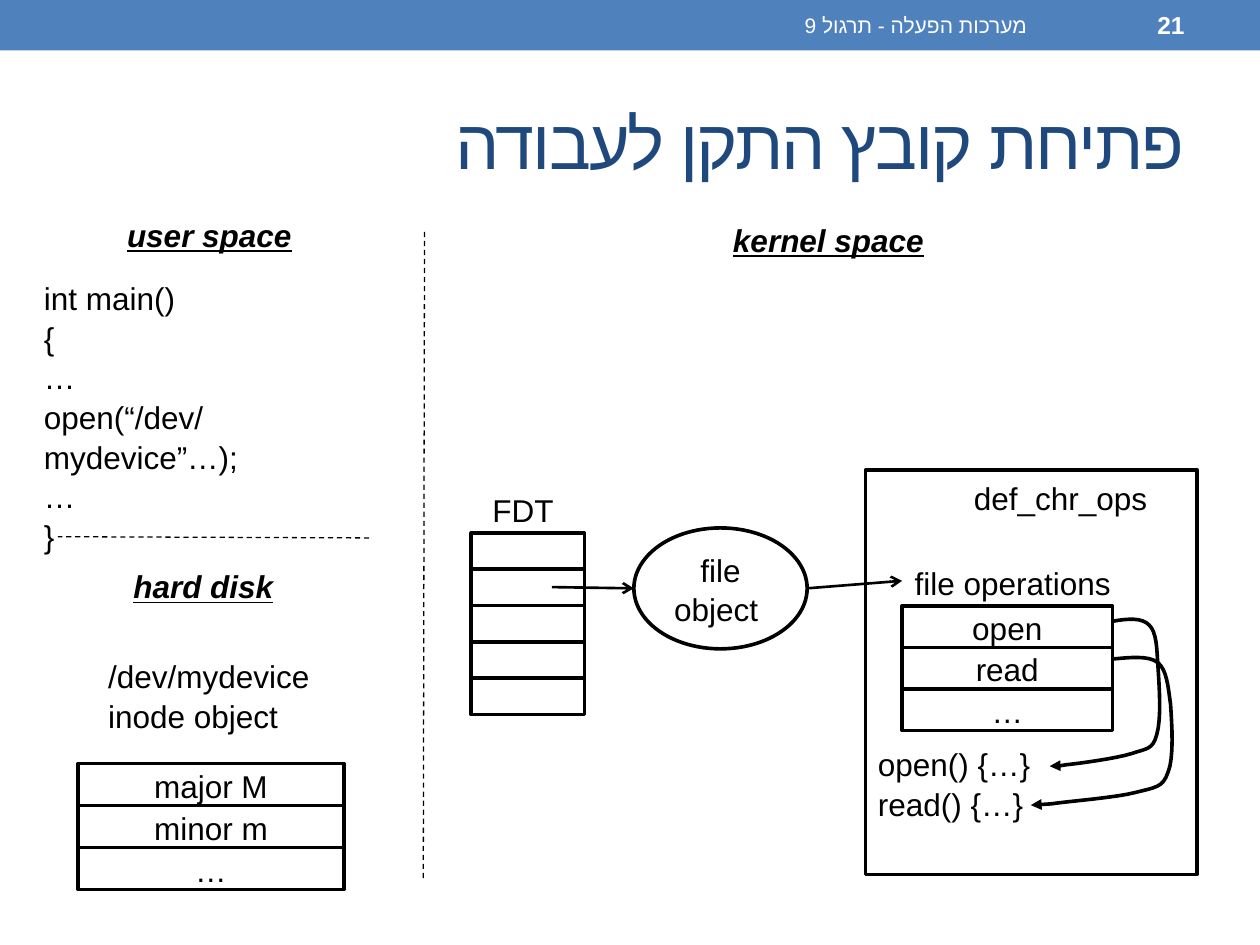
from lxml.etree import SubElement
from pptx import Presentation
from pptx.dml.color import RGBColor
from pptx.enum.dml import MSO_LINE
from pptx.enum.shapes import MSO_CONNECTOR, MSO_SHAPE
from pptx.enum.text import MSO_ANCHOR, PP_ALIGN
from pptx.oxml.ns import qn
from pptx.util import Pt

BLACK, WHITE, BLUE, NAVY = "000000", "FFFFFF", "4F81BD", "1F497D"
color = RGBColor.from_string


def write(shape, text, size=18, ink=BLACK, align=PP_ALIGN.LEFT, heading=False,
          rtl=False, wrap=True, anchor=MSO_ANCHOR.TOP):
    frame = shape.text_frame
    frame.text = text
    frame.word_wrap = wrap
    frame.vertical_anchor = anchor
    for paragraph in frame.paragraphs:
        paragraph.alignment = align
        paragraph.line_spacing = 1 if rtl else 1.05
        font = paragraph.font
        font.name, font.size = "Arial", Pt(size)
        font.color.rgb = color(ink)
        if heading:
            font.bold = font.italic = font.underline = True
        if rtl:
            paragraph._p.get_or_add_pPr().set("rtl", "1")
            for run in paragraph.runs:
                SubElement(run._r.get_or_add_rPr(), qn("a:cs"), typeface="Arial")


def outline(shape, width, dash=None, arrow=None):
    """Give a shape or connector a black line, an optional end arrow and no shadow."""
    shape.line.color.rgb = color(BLACK)
    shape.line.width = Pt(width)
    if dash:
        shape.line.dash_style = dash
    properties = shape._element.spPr
    if arrow:
        SubElement(properties.find(qn("a:ln")), qn("a:tailEnd"), type=arrow)
    SubElement(properties, qn("a:effectLst"))


presentation = Presentation()
presentation.slide_width, presentation.slide_height = Pt(720), Pt(540)
slide = presentation.slides.add_slide(presentation.slide_layouts[5])
shapes = slide.shapes

# Header band and title
band = shapes.add_shape(MSO_SHAPE.RECTANGLE, 0, 0, Pt(720), Pt(28.8))
band.fill.solid()
band.fill.fore_color.rgb = color(BLUE)
band.line.fill.background()
band.shadow.inherit = False

title = shapes.title
title.left, title.top, title.width, title.height = Pt(36), Pt(41.8), Pt(648), Pt(77.8)
write(title, "פתיחת קובץ התקן לעבודה", 40, NAVY, PP_ALIGN.RIGHT, rtl=True,
      anchor=MSO_ANCHOR.MIDDLE)
for run in title.text_frame.paragraphs[0].runs:
    run._r.get_or_add_rPr().set("spc", "-100")

for text, left, width, size in [("מערכות הפעלה - תרגול 9", 270, 324, 12),
                                ("21", 599.8, 84.2, 14)]:
    box = shapes.add_textbox(Pt(left), Pt(1.4), Pt(width), Pt(26))
    write(box, text, size, WHITE, PP_ALIGN.RIGHT, rtl=True, anchor=MSO_ANCHOR.MIDDLE)
box.text_frame.paragraphs[0].font.bold = True

# Dividers between user space, hard disk and kernel space
for ends in [(242.6, 132.5, 241.9, 502.6), (211, 307.4, 33.1, 306.7)]:
    divider = shapes.add_connector(MSO_CONNECTOR.STRAIGHT, *map(Pt, ends))
    outline(divider, 0.75, dash=MSO_LINE.DASH)

# Panel around the character device operations
panel = shapes.add_shape(MSO_SHAPE.RECTANGLE, Pt(494.6), Pt(268.6), Pt(189.4), Pt(231.1))
panel.fill.solid()
panel.fill.fore_color.rgb = color(WHITE)
outline(panel, 2.08)

for text, left, top, width in [("kernel space", 411.8, 121.7, 124.6),
                               ("user space", 65.5, 118.8, 109.4),
                               ("hard disk", 69.1, 319.7, 95)]:
    box = shapes.add_textbox(Pt(left), Pt(top), Pt(width), Pt(28.8))
    write(box, text, heading=True, wrap=False)

code = "int main()\n{\n…\nopen(“/dev/mydevice”…);\n…\n}"
labels = {}
for text, left, top, width, height in [
    (code, 18, 154.8, 211, 138.2),
    ("/dev/mydevice\vinode object", 54.7, 370.8, 140, 51.1),
    ("def_chr_ops", 549.4, 269.3, 129.6, 28.8),
    ("file operations", 515.5, 317.5, 135.4, 28.8),
    ("open() {…}\nread() {…}", 494.6, 421.2, 129.6, 51.1),
    ("FDT", 274.3, 275.8, 51.1, 28.8),
]:
    labels[text] = shapes.add_textbox(Pt(left), Pt(top), Pt(width), Pt(height))
    write(labels[text], text)

# Stacked records: inode, file operations and file descriptor table
for left, top, width, row_height, rows in [
    (44.6, 436.3, 151.9, 24, ["major M", "minor m", "…"]),
    (515.5, 346.3, 120.2, 23.7, ["open", "read", "…"]),
    (269.3, 304.6, 64.8, 20.75, [""] * 5),
]:
    for index, text in enumerate(rows):
        row = shapes.add_shape(MSO_SHAPE.RECTANGLE, Pt(left), Pt(top + index * row_height),
                               Pt(width), Pt(row_height))
        row.fill.background()
        outline(row, 2.08)
        if text:
            write(row, text, align=PP_ALIGN.CENTER, anchor=MSO_ANCHOR.MIDDLE)

file_object = shapes.add_shape(MSO_SHAPE.OVAL, Pt(362.2), Pt(301.7), Pt(99), Pt(69.1))
file_object.fill.solid()
file_object.fill.fore_color.rgb = color(WHITE)
outline(file_object, 2.08)
write(file_object, "file object ", align=PP_ALIGN.CENTER, anchor=MSO_ANCHOR.MIDDLE)

# Descriptor -> file object -> file operations
for ends in [(315.4, 335.5, 362.2, 336.2), (461.2, 336.2, 515.5, 331.9)]:
    connector = shapes.add_connector(MSO_CONNECTOR.STRAIGHT, *map(Pt, ends))
    outline(connector, 1.5, arrow="arrow")
connector.end_connect(labels["file operations"], 1)

# Curved pointers from table entries to functions, as chained cubic Bézier points
open_pointer = [
    (635.8, 355), (644.4, 353.5), (652.3, 352.8), (656.6, 357.1), (661, 361.4),
    (661, 370.1), (661.7, 380.9), (662.4, 391), (663.8, 411.1), (661, 419.8),
    (658.8, 428.4), (655.2, 427.7), (646.6, 430.6), (637.9, 433.4), (616.3, 436.3),
    (609.1, 437), (601.2, 438.5), (600.5, 437.8), (599.8, 437.8)]
read_pointer = [
    (635.8, 376.6), (645.8, 375.8), (655.9, 374.4), (661.7, 378.7), (666.7, 383),
    (667.4, 391.7), (668.9, 402.5), (669.6, 413.3), (671, 433.4), (667.4, 441.4),
    (664.6, 450), (660.2, 450), (648.7, 452.9), (637.9, 455.8), (610.6, 457.9),
    (600.5, 459.4), (590.4, 460.1), (589.7, 460.1), (589, 460.1)]
STEPS = 8
for points in (open_pointer, read_pointer):
    builder = shapes.build_freeform(*map(Pt, points[0]))
    vertices = []
    for start in range(0, len(points) - 1, 3):
        for step in range(1, STEPS + 1):
            t = step / STEPS
            weights = ((1 - t) ** 3, 3 * t * (1 - t) ** 2, 3 * t ** 2 * (1 - t), t ** 3)
            vertices.append([Pt(sum(weight * value for weight, value in zip(weights, axis)))
                             for axis in zip(*points[start:start + 4])])
    builder.add_line_segments(vertices, close=False)
    pointer = builder.convert_to_shape()
    pointer.fill.background()
    outline(pointer, 2.08, arrow="triangle")

presentation.save("out.pptx")
